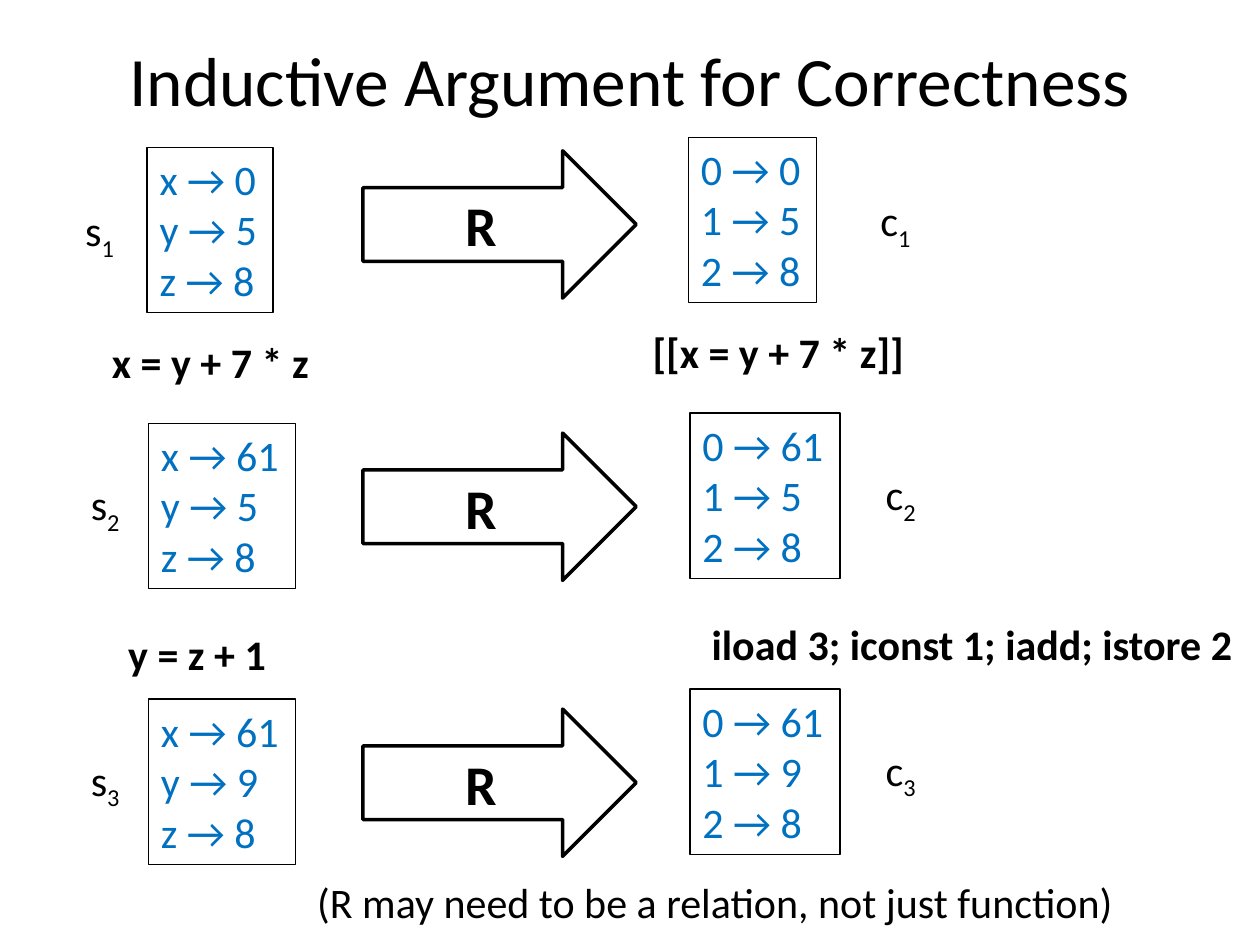
import pptx
import pptx.util
import pptx.dml.color
import pptx.enum.shapes
import pptx.enum.text

Pt = pptx.util.Pt
RGB = pptx.dml.color.RGBColor
SHAPE = pptx.enum.shapes.MSO_SHAPE
ALIGN = pptx.enum.text.PP_ALIGN
ANCHOR = pptx.enum.text.MSO_ANCHOR
AUTOSIZE = pptx.enum.text.MSO_AUTO_SIZE

# Content
TITLE = "Inductive Argument for Correctness"
NOTE = "(R may need to be a relation, not just function)"
RELATION = "R"
VALUES = [(0, 5, 8), (61, 5, 8), (61, 9, 8)]  # one state per row
SIDES = [
    # state boxes and labels: (left, width) for each row; steps: (text, left, width)
    dict(letter="s", keys="xyz", rise=0, label_width=32.4,
         labels=[41.6, 44.8, 44.8],
         boxes=[(84.1, 72), (84.9, 84.2), (84.9, 84.2)],
         steps=[("x = y + 7 * z", 56.9, 126.7), ("y = z + 1", 66.2, 93.6)]),
    dict(letter="c", keys="012", rise=5.75, label_width=33.1,
         labels=[496, 499, 499],
         boxes=[(393.4, 73.4), (394.3, 85.7), (394.3, 85.7)],
         steps=[("[[x = y + 7 * z]]", 365.8, 159.1),
                ("iload 3; iconst 1; iadd; istore 2", 399.6, 320.4)]),
]

# Theme
THEME = dict(font="Calibri", ink=RGB(0, 0, 0), state=RGB(0x00, 0x70, 0xC0),
             paper=RGB(255, 255, 255), title=39.6, relation=32, body=24)

# Row rules
ROW_TOP, ROW_PITCH = 84.2, 157.65
ARROW_TOPS = [86.2, 247.5, 405.2]
LABEL_DROPS = [29.3, 28.1, 28.1]
STEP_TOPS = [188.6, 355.9]
BOX_HEIGHT, LINE_HEIGHT = 94.5, 36

deck = pptx.Presentation()
deck.slide_width, deck.slide_height = Pt(720), Pt(540)
slide = deck.slides.add_slide(deck.slide_layouts[6])


def write(shape, text, size=THEME["body"], color=THEME["ink"], bold=False,
          align=ALIGN.LEFT, anchor=ANCHOR.TOP, wrap=False, grow=True, subscript=""):
    frame = shape.text_frame
    frame.word_wrap = wrap
    frame.auto_size = AUTOSIZE.SHAPE_TO_FIT_TEXT if grow else AUTOSIZE.NONE
    frame.vertical_anchor = anchor
    paragraph = frame.paragraphs[0]
    paragraph.alignment = align
    for number, line in enumerate(text.split("\n")):
        if number:
            paragraph.add_line_break()
        paragraph.add_run().text = line
    if subscript:
        lowered = paragraph.add_run()
        lowered.text = subscript
        lowered.font._element.set("baseline", "-25000")
    for run in paragraph.runs:
        run.font.name = THEME["font"]
        run.font.size = Pt(size)
        run.font.bold = bold
        run.font.color.rgb = color


def textbox(left, top, width, height, text, **style):
    box = slide.shapes.add_textbox(Pt(left), Pt(top), Pt(width), Pt(height))
    write(box, text, **style)


def outlined(kind, left, top, width, height, line_width, text, fill=None, **style):
    shape = slide.shapes.add_shape(kind, Pt(left), Pt(top), Pt(width), Pt(height))
    shape.shadow.inherit = False
    if fill is None:
        shape.fill.background()
    else:
        shape.fill.solid()
        shape.fill.fore_color.rgb = fill
    shape.line.color.rgb = THEME["ink"]
    shape.line.width = Pt(line_width)
    write(shape, text, **style)


# Title
textbox(36, 0, 648, 90, TITLE, size=THEME["title"], align=ALIGN.CENTER,
        anchor=ANCHOR.MIDDLE, wrap=True, grow=False)

# Relation arrows
for top in ARROW_TOPS:
    outlined(SHAPE.RIGHT_ARROW, 207.4, top, 156.2, 84.2, 2, RELATION,
             fill=THEME["paper"], size=THEME["relation"], bold=True,
             align=ALIGN.CENTER, anchor=ANCHOR.MIDDLE, wrap=True, grow=False)

# Source states on the left, compiled states on the right
for side in SIDES:
    for row, values in enumerate(VALUES):
        top = ROW_TOP + row * ROW_PITCH - side["rise"]
        left, width = side["boxes"][row]
        state = "\n".join(f"{key} → {value}" for key, value in zip(side["keys"], values))
        outlined(SHAPE.RECTANGLE, left, top, width, BOX_HEIGHT, 0.75, state,
                 color=THEME["state"])
        textbox(side["labels"][row], top + LABEL_DROPS[row], side["label_width"],
                LINE_HEIGHT, side["letter"], subscript=str(row + 1))
    # Statements between the states
    for (step, left, width), top in zip(side["steps"], STEP_TOPS):
        textbox(left, top - side["rise"], width, LINE_HEIGHT, step, bold=True)

# Closing note
textbox(174.2, 497.5, 522, LINE_HEIGHT, NOTE, wrap=True)

deck.save("out.pptx")
